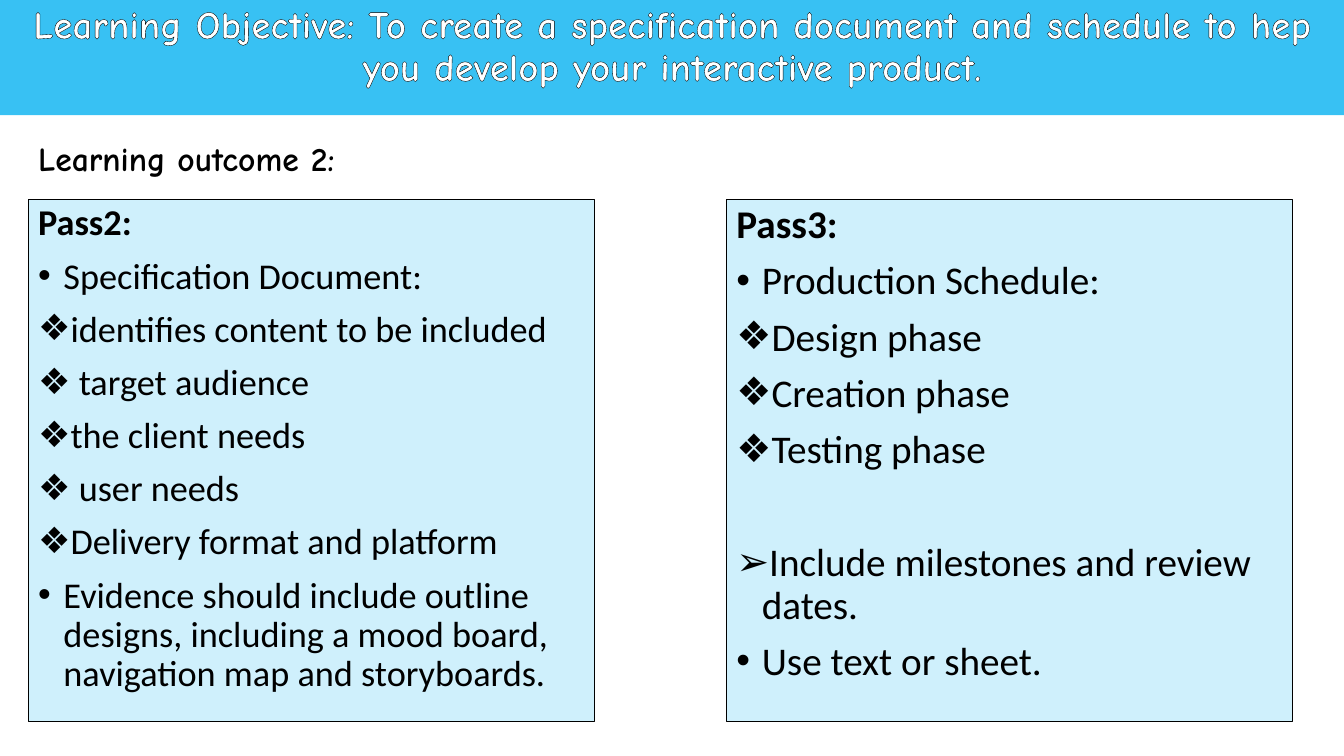
from dataclasses import dataclass

from lxml.etree import SubElement
from pptx import Presentation
from pptx.dml.color import RGBColor
from pptx.enum.shapes import MSO_SHAPE
from pptx.enum.text import MSO_ANCHOR, MSO_AUTO_SIZE, PP_ALIGN
from pptx.oxml import parse_xml
from pptx.oxml.ns import nsdecls, qn
from pptx.util import Cm, Pt


@dataclass(frozen=True)
class Theme:
    accent: RGBColor = RGBColor(0x00, 0xB0, 0xF0)
    black: RGBColor = RGBColor(0x00, 0x00, 0x00)
    white: RGBColor = RGBColor(0xFF, 0xFF, 0xFF)
    banner_opacity: int = 78
    panel_opacity: int = 19
    heading_font: str = "Comic Neue"
    body_font: str = "Calibri"
    banner_size: float = 28
    outcome_size: float = 24
    pass2_size: float = 25.9
    pass3_size: float = 28
    line_width: float = 0.75
    line_spacing: float = 0.9
    paragraph_gap: float = 10
    section_gap: float = 50.4


THEME = Theme()
DOT, DIAMOND, ARROW = "•", "❖", "➢"
MARGIN = Cm(0.71)
PANEL_TOP = Cm(5.03)
PANEL_WIDTH = Cm(14.27)
PANEL_HEIGHT = Cm(13.16)
BULLET_INDENT = Cm(0.64)

OBJECTIVE = ("Learning Objective: To create a specification document and schedule "
             "to hep you develop your interactive product.")
PASS2_ITEMS = [
    (DOT, "Specification Document:"),
    (DIAMOND, "identifies content to be included"),
    (DIAMOND, " target audience"),
    (DIAMOND, "the client needs"),
    (DIAMOND, " user needs"),
    (DIAMOND, "Delivery format and platform"),
    (DOT, "Evidence should include outline designs, including a mood board, "
          "navigation map and storyboards."),
]
PASS3_ITEMS = [
    (DOT, "Production Schedule:"),
    (DIAMOND, "Design phase"),
    (DIAMOND, "Creation phase"),
    (DIAMOND, "Testing phase"),
    (ARROW, "Include milestones and review dates."),
    (DOT, "Use text or sheet."),
]


def set_attributes(target, values):
    for name, value in values.items():
        setattr(target, name, value)


def add_run(paragraph, text, font, size, color, bold=False):
    run = paragraph.add_run()
    run.text = text
    set_attributes(run.font, {"name": font, "size": Pt(size), "bold": bold})
    run.font.color.rgb = color
    return run


def outline_run(run):
    """Draw a thin black line around the letters."""
    line = parse_xml(
        f'<a:ln {nsdecls("a")} w="{Pt(THEME.line_width)}"><a:solidFill>'
        f'<a:srgbClr val="{THEME.black}"/></a:solidFill></a:ln>')
    run.font._element.insert(0, line)


def add_bullet(paragraph, character):
    properties = paragraph._p.get_or_add_pPr()
    properties.set("marL", str(BULLET_INDENT))
    properties.set("indent", str(-BULLET_INDENT))
    SubElement(properties, qn("a:buFont")).set("typeface", "Arial")
    SubElement(properties, qn("a:buChar")).set("char", character)


def add_tinted_rectangle(slide, left, top, width, height, opacity):
    shape = slide.shapes.add_shape(MSO_SHAPE.RECTANGLE, left, top, width, height)
    shape.shadow.inherit = False
    shape.fill.solid()
    shape.fill.fore_color.rgb = THEME.accent
    color = shape.fill._xPr.find(qn("a:solidFill")).find(qn("a:srgbClr"))
    SubElement(color, qn("a:alpha")).set("val", str(opacity * 1000))
    set_attributes(shape.text_frame, {"word_wrap": True, "vertical_anchor": MSO_ANCHOR.TOP})
    return shape


def add_banner(slide, width):
    banner = add_tinted_rectangle(slide, 0, 0, width, Cm(2.9), THEME.banner_opacity)
    banner.line.fill.background()
    paragraph = banner.text_frame.paragraphs[0]
    set_attributes(paragraph, {"alignment": PP_ALIGN.CENTER,
                               "line_spacing": THEME.line_spacing})
    outline_run(add_run(paragraph, OBJECTIVE, THEME.heading_font, THEME.banner_size,
                        THEME.white, bold=True))


def add_outcome_label(slide):
    label = slide.shapes.add_textbox(MARGIN, Cm(3.35), Cm(8.76), Cm(1.27))
    set_attributes(label.text_frame, {"word_wrap": False,
                                      "auto_size": MSO_AUTO_SIZE.SHAPE_TO_FIT_TEXT})
    add_run(label.text_frame.paragraphs[0], "Learning outcome 2:", THEME.heading_font,
            THEME.outcome_size, THEME.black, bold=True)


def add_criterion_panel(slide, left, heading, items, size):
    panel = add_tinted_rectangle(slide, left, PANEL_TOP, PANEL_WIDTH, PANEL_HEIGHT,
                                 THEME.panel_opacity)
    panel.line.color.rgb = THEME.black
    panel.line.width = Pt(THEME.line_width)
    frame = panel.text_frame
    title = frame.paragraphs[0]
    set_attributes(title, {"alignment": PP_ALIGN.LEFT, "line_spacing": THEME.line_spacing})
    add_run(title, heading, THEME.body_font, size, THEME.black, bold=True)
    for bullet, text in items:
        paragraph = frame.add_paragraph()
        gap = THEME.section_gap if bullet == ARROW else THEME.paragraph_gap
        set_attributes(paragraph, {"alignment": PP_ALIGN.LEFT, "space_before": Pt(gap),
                                   "line_spacing": THEME.line_spacing})
        add_bullet(paragraph, bullet)
        add_run(paragraph, text, THEME.body_font, size, THEME.black)


def main():
    presentation = Presentation()
    set_attributes(presentation, {"slide_width": Cm(33.87), "slide_height": Cm(19.05)})
    slide = presentation.slides.add_slide(presentation.slide_layouts[6])
    add_banner(slide, presentation.slide_width)
    add_outcome_label(slide)
    add_criterion_panel(slide, MARGIN, "Pass2:", PASS2_ITEMS, THEME.pass2_size)
    add_criterion_panel(slide, Cm(18.31), "Pass3:", PASS3_ITEMS, THEME.pass3_size)
    presentation.save("out.pptx")


if __name__ == "__main__":
    main()
